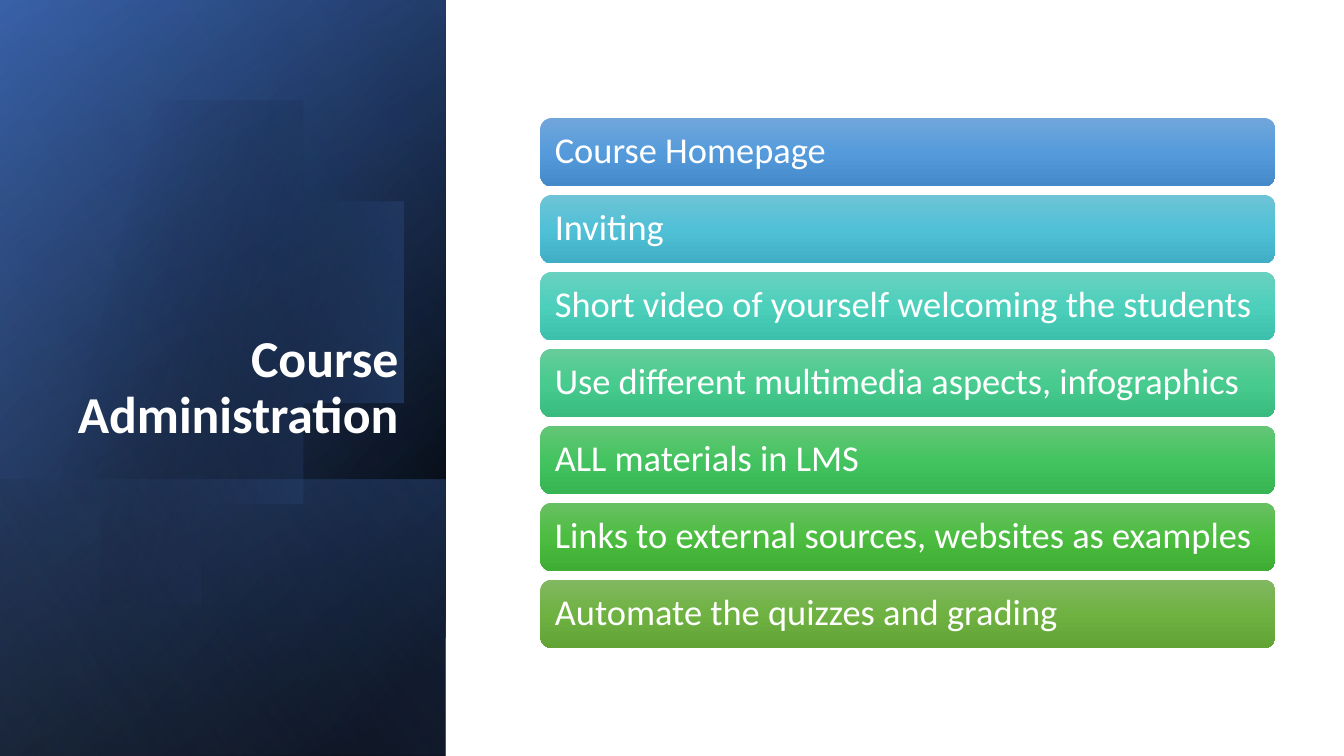
import math
from lxml import etree
from pptx import Presentation
from pptx.dml.color import RGBColor
from pptx.enum import shapes, text
from pptx.oxml.ns import qn
from pptx.util import Inches, Pt

BARS = [
    ("Course Homepage", "71A6DB", "559BDB", "448ACA"),
    ("Inviting", "6EC4D6", "50C0D6", "40AFC5"),
    ("Short video of yourself welcoming the students", "6AD1C0", "4CD0BC", "3CC0AC"),
    ("Use different multimedia aspects, infographics", "67CC9A", "47CB8E", "39BB7F"),
    ("ALL materials in LMS", "64C677", "44C460", "36B552"),
    ("Links to external sources, websites as examples", "69C062", "4CBD41", "3FAD34"),
    ("Automate the quizzes and grading", "81B861", "6FB242", "62A336"),
]


def color(value):
    return RGBColor.from_string(value)


def fill_gradient(sp, stops, angle):
    sp.shadow.inherit = False
    sp.line.fill.background()
    sp.fill.gradient()
    grad = sp._element.spPr.find(qn("a:gradFill"))
    for child in list(grad):
        grad.remove(child)
    grad.set("rotWithShape", "1")
    stop_list = etree.SubElement(grad, qn("a:gsLst"))
    for position, value, opacity in stops:
        gs = etree.SubElement(stop_list, qn("a:gs"), pos=str(position * 1000))
        clr = etree.SubElement(gs, qn("a:srgbClr"), val=str(color(value)))
        if opacity < 100:
            etree.SubElement(clr, qn("a:alpha"), val=str(opacity * 1000))
    etree.SubElement(grad, qn("a:lin"), ang=str(angle * 60000), scaled="0")


def write(sp, words, size, bold=False, align=text.PP_ALIGN.LEFT):
    tf = sp.text_frame
    tf.word_wrap = True
    p = tf.paragraphs[0]
    p.text = words
    p.alignment = align
    p.line_spacing = 0.9
    p.font.name = "Calibri"
    p.font.size = Pt(size)
    p.font.bold = bold
    p.font.color.rgb = color("FFFFFF")
    return tf


def add_layer(s, x, y, w, h, stops, angle):
    sp = s.shapes.add_shape(shapes.MSO_SHAPE.RECTANGLE, Inches(x + (w - h) / 2),
                            Inches(y + (h - w) / 2), Inches(h), Inches(w))
    sp.rotation = 90
    sp._element.spPr.find(qn("a:xfrm")).set("flipH", "1")
    fill_gradient(sp, stops, angle)


def add_disc(s, cx, cy, radius, cut):
    reach = math.acos((cut - cx) / radius)
    steps = 120
    points = []
    for i in range(steps + 1):
        a = reach * (2 * i / steps - 1)
        points.append((cx + radius * math.cos(a), cy + radius * math.sin(a)))
    fb = s.shapes.build_freeform(*points[0], scale=Inches(1))
    fb.add_line_segments(points[1:], close=True)
    fill_gradient(fb.convert_to_shape(), [(29, "000000", 0), (100, "4472C4", 43)], 14)


def add_title_panel(s, x, y, w, h):
    add_layer(s, x, y, w, h, [(8, "000000", 100), (100, "2F5597", 100)], 50)
    add_layer(s, x, y, w, h, [(0, "000000", 0), (99, "4472C4", 46)], 30)
    band = 2.74
    add_layer(s, x, y + h - band, w, band, [(2, "4472C4", 29), (100, "000000", 30)], 130)
    add_disc(s, x + 1.43, y + 3.39, 2.29, x - 0.15)
    add_layer(s, x, y, w, h, [(0, "000000", 0), (99, "8FAADC", 11)], 120)
    title = s.shapes.add_textbox(Inches(x + 0.64), Inches(y + 1.84), Inches(3.41), Inches(2.62))
    tf = write(title, "Course Administration", 37, True, text.PP_ALIGN.RIGHT)
    tf.vertical_anchor = text.MSO_ANCHOR.BOTTOM


def add_bars(s, x, y, w, h):
    bar_h = 0.68
    pitch = (h - bar_h) / (len(BARS) - 1)
    for i, (words, top, middle, bottom) in enumerate(BARS):
        sp = s.shapes.add_shape(shapes.MSO_SHAPE.ROUNDED_RECTANGLE, Inches(x),
                                Inches(y + i * pitch), Inches(w), Inches(bar_h))
        fill_gradient(sp, [(0, top, 100), (50, middle, 100), (100, bottom, 100)], 90)
        tf = write(sp, words, 26)
        tf.vertical_anchor = text.MSO_ANCHOR.MIDDLE
        tf.margin_left = tf.margin_right = Inches(0.11)


def main():
    prs = Presentation()
    prs.slide_width, prs.slide_height = Inches(13.33), Inches(7.5)
    s = prs.slides.add_slide(prs.slide_layouts[6])
    add_title_panel(s, 0, 0, 4.42, 7.5)
    add_bars(s, 5.36, 1.17, 7.29, 5.26)
    prs.save("out.pptx")


if __name__ == "__main__":
    main()
